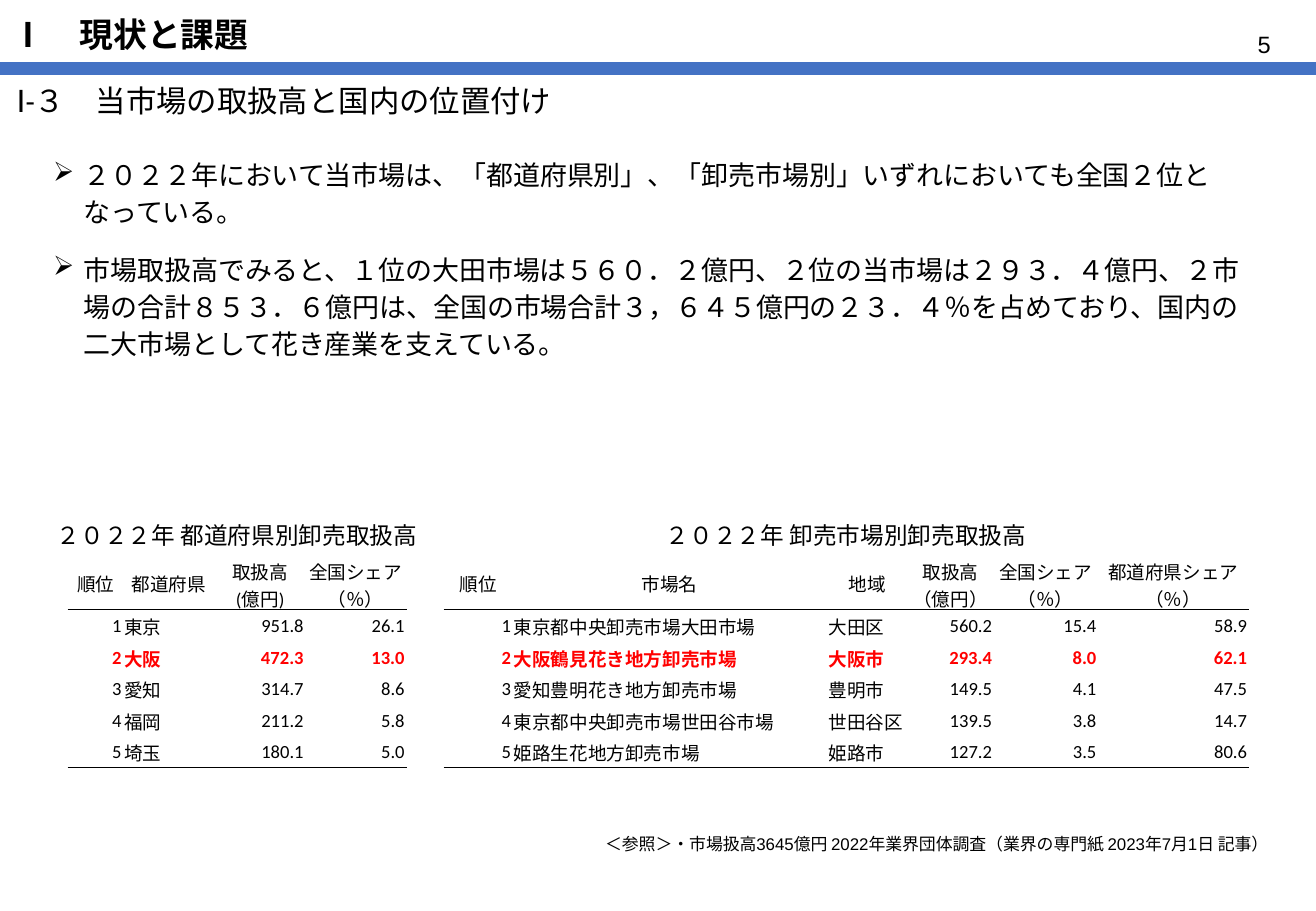
from lxml.etree import SubElement
from pptx import Presentation
from pptx.dml.color import RGBColor
from pptx.enum.shapes import MSO_CONNECTOR
from pptx.enum.text import MSO_ANCHOR, PP_ALIGN
from pptx.oxml import parse_xml
from pptx.oxml.ns import nsdecls, qn
from pptx.util import Cm, Pt

BLACK = RGBColor(0x00, 0x00, 0x00)
WHITE = RGBColor(0xFF, 0xFF, 0xFF)
RED = RGBColor(0xFF, 0x00, 0x00)
BLUE = RGBColor(0x44, 0x72, 0xC4)
KANJI = "Noto Sans CJK JP"
LEFT, MID, RIGHT = PP_ALIGN.LEFT, PP_ALIGN.CENTER, PP_ALIGN.RIGHT

POINTS = [
    "２０２２年において当市場は、「都道府県別」、「卸売市場別」いずれにおいても全国２位となっている。",
    "市場取扱高でみると、１位の大田市場は５６０．２億円、２位の当市場は２９３．４億円、"
    "２市場の合計８５３．６億円は、全国の市場合計３，６４５億円の２３．４％を占めており、"
    "国内の二大市場として花き産業を支えている。",
]
REGIONS = [
    ["順位", "都道府県", "取扱高\n(億円)", "全国シェア\n（％）"],
    ["1", "東京", "951.8", "26.1"],
    ["2", "大阪", "472.3", "13.0"],
    ["3", "愛知", "314.7", "8.6"],
    ["4", "福岡", "211.2", "5.8"],
    ["5", "埼玉", "180.1", "5.0"],
]
MARKETS = [
    ["順位", "市場名", "地域", "取扱高\n（億円）", "全国シェア\n（％）", "都道府県シェア\n（％）"],
    ["1", "東京都中央卸売市場大田市場", "大田区", "560.2", "15.4", "58.9"],
    ["2", "大阪鶴見花き地方卸売市場", "大阪市", "293.4", "8.0", "62.1"],
    ["3", "愛知豊明花き地方卸売市場", "豊明市", "149.5", "4.1", "47.5"],
    ["4", "東京都中央卸売市場世田谷市場", "世田谷区", "139.5", "3.8", "14.7"],
    ["5", "姫路生花地方卸売市場", "姫路市", "127.2", "3.5", "80.6"],
]
OWN_RANK = "2"


def write(frame, text, size=11, font="Calibri", color=BLACK, bold=False,
          align=LEFT, space=None, before=0, bullet=None):
    """Fill a text frame, one paragraph for each line of the text."""
    for num, line in enumerate(text.split("\n")):
        para = frame.add_paragraph() if num else frame.paragraphs[0]
        para.alignment = align
        para.space_before = Pt(before)
        if space:
            para.line_spacing = space
        if bullet:
            props = para._p.get_or_add_pPr()
            props.set("marL", str(Cm(0.64)))
            props.set("indent", str(-Cm(0.64)))
            SubElement(props, qn("a:buChar")).set("char", bullet)
        run = para.add_run()
        run.text = line
        run.font.size = Pt(size)
        run.font.name = font
        run.font.bold = bold
        run.font.color.rgb = color
        props = run._r.get_or_add_rPr()
        props.set("lang", "ja-JP")
        SubElement(props, qn("a:ea")).set("typeface", KANJI)


def add_text(slide, text, left, top, width, height,
             wrap=True, anchor=MSO_ANCHOR.TOP, **style):
    box = slide.shapes.add_textbox(Cm(left), Cm(top), Cm(width), Cm(height))
    frame = box.text_frame
    frame.word_wrap = wrap
    frame.vertical_anchor = anchor
    write(frame, text, **style)


def add_rule(slide, top, width):
    rule = slide.shapes.add_connector(
        MSO_CONNECTOR.STRAIGHT, 0, Cm(top), width, Cm(top))
    rule.line.color.rgb = BLUE
    rule.line.width = Pt(7.75)
    SubElement(rule._element.spPr, qn("a:effectLst"))


def set_edge(cell, side):
    """Draw a thin black border on one side: T or B."""
    edge = parse_xml(
        f'<a:ln{side} {nsdecls("a")} w="{Pt(0.75)}"><a:solidFill>'
        f'<a:srgbClr val="{BLACK}"/></a:solidFill></a:ln{side}>')
    cell._tc.get_or_add_tcPr().insert(0, edge)


def add_table(slide, rows, left, top, widths, names):
    """Add a ranking; names holds the columns set to the left."""
    heights = [1.12] + [0.66] * (len(rows) - 1)
    table = slide.shapes.add_table(
        len(rows), len(widths), Cm(left), Cm(top),
        Cm(sum(widths)), Cm(sum(heights))).table
    table.first_row = table.horz_banding = False
    for col, width in zip(table.columns, widths):
        col.width = Cm(width)
    for r, (row, height) in enumerate(zip(rows, heights)):
        table.rows[r].height = Cm(height)
        own = row[0] == OWN_RANK
        for c, text in enumerate(row):
            cell = table.cell(r, c)
            cell.margin_left = cell.margin_right = cell.margin_top = Cm(0.03)
            cell.margin_bottom = 0
            cell.vertical_anchor = MSO_ANCHOR.MIDDLE
            cell.fill.solid()
            cell.fill.fore_color.rgb = WHITE
            align = MID if r == 0 else LEFT if c in names else RIGHT
            write(cell.text_frame, text, align=align, bold=own,
                  color=RED if own else BLACK)
            if r in (0, len(rows) - 1):
                set_edge(cell, "B")
            if r == 1:
                set_edge(cell, "T")


def main():
    deck = Presentation()
    deck.slide_width, deck.slide_height = Cm(27.51), Cm(19.05)
    slide = deck.slides.add_slide(deck.slide_layouts[6])

    add_rule(slide, 1.43, deck.slide_width)
    add_text(slide, "5", 26.04, 0.5, 1.04, 0.86, wrap=False, size=14, font="Arial")
    add_text(slide, "Ⅰ　現状と課題", 0, 0.23, 27.51, 1.09,
             anchor=MSO_ANCHOR.MIDDLE, size=20, bold=True, space=0.9)
    add_text(slide, "Ⅰ-３　当市場の取扱高と国内の位置付け", 0.1, 1.6, 27.51, 1.09,
             anchor=MSO_ANCHOR.MIDDLE, size=18, space=0.9)
    add_text(slide, "\n".join(POINTS), 0.86, 3.1, 25.73, 7.85, size=16,
             font="Arial", space=Pt(22), before=12, bullet="➢")

    for title, left in (("２０２２年 都道府県別卸売取扱高", 0.91),
                        ("２０２２年 卸売市場別卸売取扱高", 13.64)):
        add_text(slide, title, left, 10.77, 8.1, 0.86, wrap=False,
                 size=14, align=MID)
    add_table(slide, REGIONS, 1.43, 11.63, [1.14, 1.93, 1.88, 2.11], names=(1,))
    add_table(slide, MARKETS, 9.29, 11.63,
              [1.42, 6.58, 1.68, 1.8, 2.18, 3.15], names=(1, 2))
    add_text(slide, "＜参照＞・市場扱高3645億円 2022年業界団体調査（業界の専門紙 2023年7月1日 記事）",
             12.4, 17.3, 14.6, 0.69, size=10, font="Arial")
    deck.save("out.pptx")


if __name__ == "__main__":
    main()
